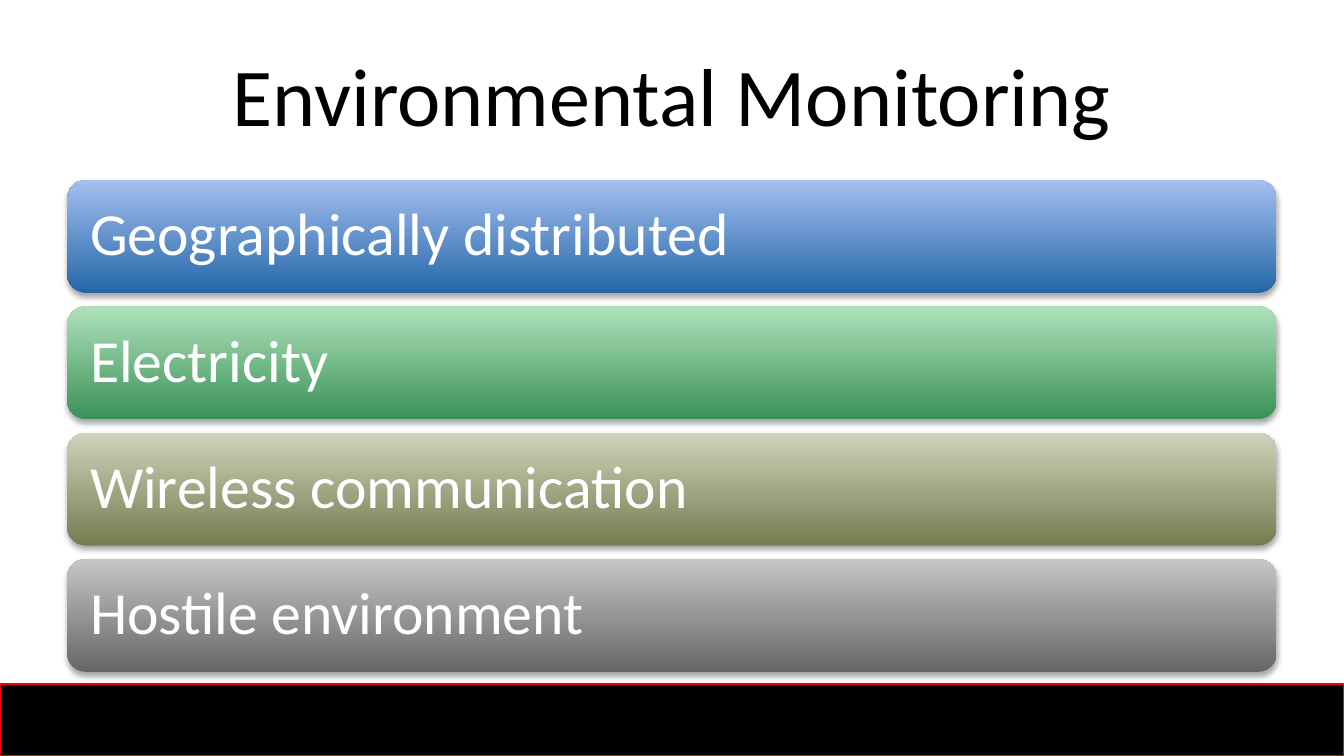
from lxml.etree import SubElement
from pptx import Presentation
from pptx.dml.color import RGBColor
from pptx.enum.shapes import MSO_SHAPE
from pptx.enum.text import MSO_ANCHOR, PP_ALIGN
from pptx.oxml.ns import qn
from pptx.util import Inches, Pt

# Content: label, bottom colour, top colour
TITLE = "Environmental Monitoring"
BARS = [
    ("Geographically distributed", "2466A8", "A4BFEF"),
    ("Electricity", "3A9257", "AFE1BB"),
    ("Wireless communication", "757C50", "CED3BA"),
    ("Hostile environment", "666666", "C6C6C6"),
]

THEME = {
    "font": "Calibri", "title": 44, "label": 32,
    "ink": "000000", "paper": "FFFFFF", "edge": "F90000",
}

# Layout in inches, on a 16:9 slide
WIDE = 10
HIGH = WIDE * 9 / 16
LEFT, SPAN = 0.5, 9
TOP, TALL, STEP = 1.34, 0.84, 0.94
FOOT = 5.09


def rgb(code):
    return RGBColor.from_string(code)


def style(para, size, color):
    para.font.name = THEME["font"]
    para.font.size = Pt(THEME[size])
    para.font.color.rgb = rgb(THEME[color])


def shade(shape):
    """Give the shape a soft shadow just below it."""
    shape.shadow.inherit = False
    effects = shape._element.spPr.find(qn("a:effectLst"))
    outer = SubElement(effects, qn("a:outerShdw"), blurRad=str(Pt(3.1)),
                       dist=str(Pt(1.8)), dir="5400000", rotWithShape="0")
    color = SubElement(outer, qn("a:srgbClr"), val=THEME["ink"])
    SubElement(color, qn("a:alpha"), val="35000")


def add_box(slide, kind, *place):
    box = slide.shapes.add_shape(kind, *map(Inches, place))
    shade(box)
    return box


def add_bar(slide, top, label, low, high):
    bar = add_box(slide, MSO_SHAPE.ROUNDED_RECTANGLE, LEFT, top, SPAN, TALL)
    bar.line.fill.background()
    bar.fill.gradient()
    bar.fill.gradient_angle = 90
    for stop, code in zip(bar.fill.gradient_stops, (low, high)):
        stop.color.rgb = rgb(code)
    frame = bar.text_frame
    frame.word_wrap = True
    frame.vertical_anchor = MSO_ANCHOR.MIDDLE
    frame.margin_left = frame.margin_right = Inches(0.13)
    frame.margin_top = frame.margin_bottom = Inches(0.13)
    para = frame.paragraphs[0]
    para.text = label
    para.alignment = PP_ALIGN.LEFT
    para.line_spacing = 0.9
    style(para, "label", "paper")


def main():
    deck = Presentation()
    deck.slide_width, deck.slide_height = Inches(WIDE), Inches(HIGH)
    slide = deck.slides.add_slide(deck.slide_layouts[5])

    # Footer band
    band = add_box(slide, MSO_SHAPE.RECTANGLE, 0, FOOT, WIDE, HIGH - FOOT)
    band.fill.solid()
    band.fill.fore_color.rgb = rgb(THEME["ink"])
    band.line.color.rgb = rgb(THEME["edge"])
    band.line.width = Pt(0.75)

    # Title
    title = slide.shapes.title
    title.left, title.top = Inches(LEFT), Inches(0.23)
    title.width, title.height = Inches(SPAN), Inches(0.94)
    title.text_frame.vertical_anchor = MSO_ANCHOR.MIDDLE
    para = title.text_frame.paragraphs[0]
    para.text = TITLE
    para.alignment = PP_ALIGN.CENTER
    style(para, "title", "ink")

    # Stacked bars
    for row, (label, low, high) in enumerate(BARS):
        add_bar(slide, TOP + row * STEP, label, low, high)

    deck.save("out.pptx")


if __name__ == "__main__":
    main()
